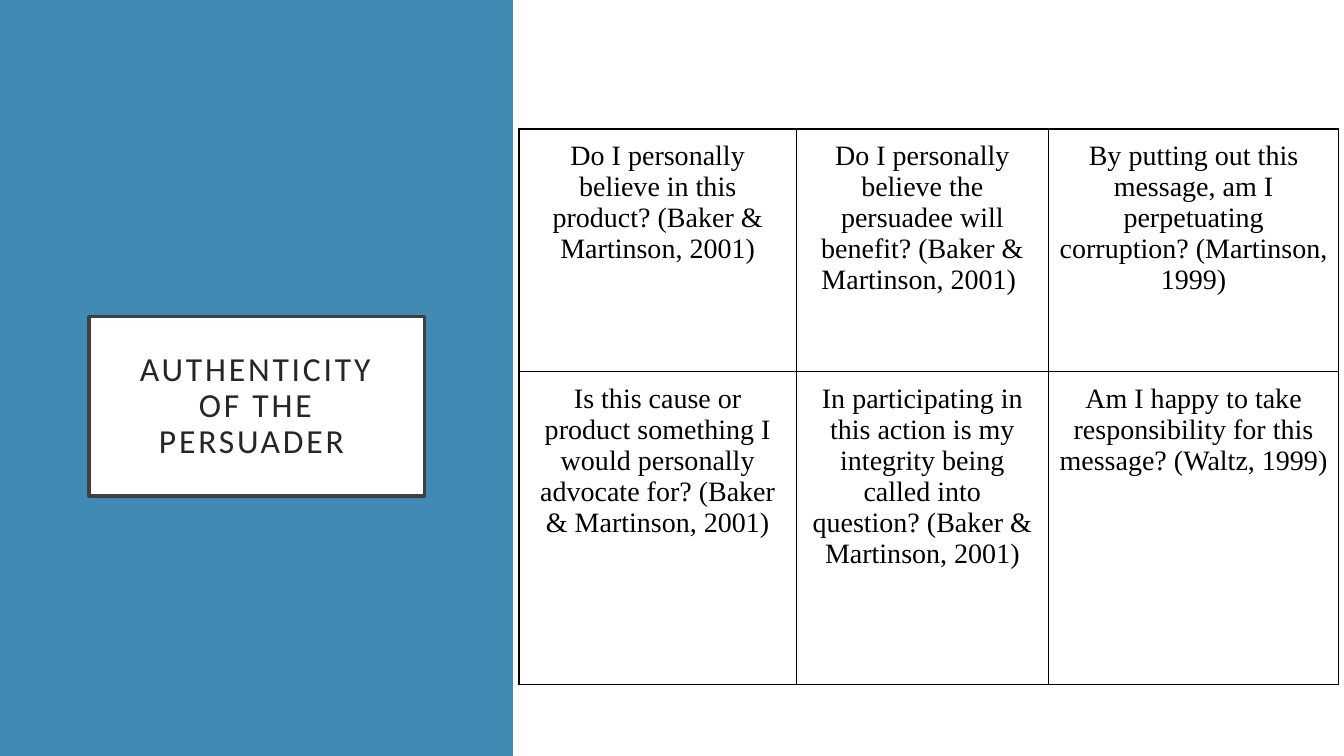
"""Build the slide on the authenticity of the persuader."""
from lxml.etree import SubElement
from pptx import Presentation
from pptx.dml.color import RGBColor
from pptx.enum.shapes import MSO_SHAPE as SHAPE
from pptx.enum.text import MSO_ANCHOR as ANCHOR, MSO_AUTO_SIZE as FIT, PP_ALIGN as ALIGN
from pptx.oxml.ns import qn
from pptx.util import Cm, Pt


def rgb(value):
    return RGBColor.from_string(value)


def add_text(tf, text, font, size, color, inset_x, inset_y):
    tf.margin_left = tf.margin_right = Cm(inset_x)
    tf.margin_top = tf.margin_bottom = Cm(inset_y)
    p = tf.paragraphs[0]
    p.alignment = ALIGN.CENTER
    r = p.add_run()
    r.text = text
    r.font.name = font
    r.font.size = Pt(size)
    r.font.color.rgb = rgb(color)
    return p, r


questions = [
    ["Do I personally believe in this product? (Baker & Martinson, 2001)",
     "Do I personally believe the persuadee will benefit? (Baker & Martinson, 2001) ",
     "By putting out this message, am I perpetuating corruption? (Martinson, 1999)"],
    ["Is this cause or product something I would personally advocate for? (Baker & Martinson, 2001)",
     "In participating in this action is my integrity being called into question? (Baker & Martinson, 2001)",
     "Am I happy to take responsibility for this message? (Waltz, 1999)"],
]
col_widths = [6.99, 6.35, 7.32]
row_heights = [6.12, 7.87]

prs = Presentation()
prs.slide_width, prs.slide_height = Cm(33.87), Cm(19.05)
s = prs.slides.add_slide(prs.slide_layouts[5])
s.background.fill.solid()
s.background.fill.fore_color.rgb = rgb("418AB3")

title = s.shapes.title
title.left, title.top, title.width, title.height = Cm(2.24), Cm(7.98), Cm(8.46), Cm(4.52)
title.fill.solid()
title.fill.fore_color.rgb = rgb("FFFFFF")
title.line.color.rgb = rgb("404040")
title.line.width = Pt(2.5)
tf = title.text_frame
tf.word_wrap = True
tf.auto_size = FIT.NONE
tf.vertical_anchor = ANCHOR.MIDDLE
p, r = add_text(tf, "AUTHENTICITY OF THE PERSUADER ", "Calibri", 24, "262626", 0.76, 0.51)
p.line_spacing = 0.9
r.font._element.set("spc", "200")

panel = s.shapes.add_shape(SHAPE.RECTANGLE, Cm(12.93), 0, Cm(20.94), prs.slide_height)
panel.shadow.inherit = False
panel.fill.solid()
panel.fill.fore_color.rgb = rgb("FFFFFF")
panel.line.fill.background()

table = s.shapes.add_table(2, 3, Cm(13.08), Cm(3.25),
                           Cm(sum(col_widths)), Cm(sum(row_heights))).table
table.first_row = table.horz_banding = False
for col, width in zip(table.columns, col_widths):
    col.width = Cm(width)
for row, height, texts in zip(table.rows, row_heights, questions):
    row.height = Cm(height)
    for cell, text in zip(row.cells, texts):
        add_text(cell.text_frame, text, "Times New Roman", 20, "000000", 0.28, 0.28)
        cell.margin_left = cell.margin_right = Cm(0.28)
        cell.margin_top = cell.margin_bottom = Cm(0.28)
        tcPr = cell._tc.get_or_add_tcPr()
        for side in ("a:lnL", "a:lnR", "a:lnT", "a:lnB"):
            ln = SubElement(tcPr, qn(side), w=str(Pt(1)))
            SubElement(SubElement(ln, qn("a:solidFill")), qn("a:srgbClr"), val="000000")
        cell.fill.background()

prs.save("out.pptx")
